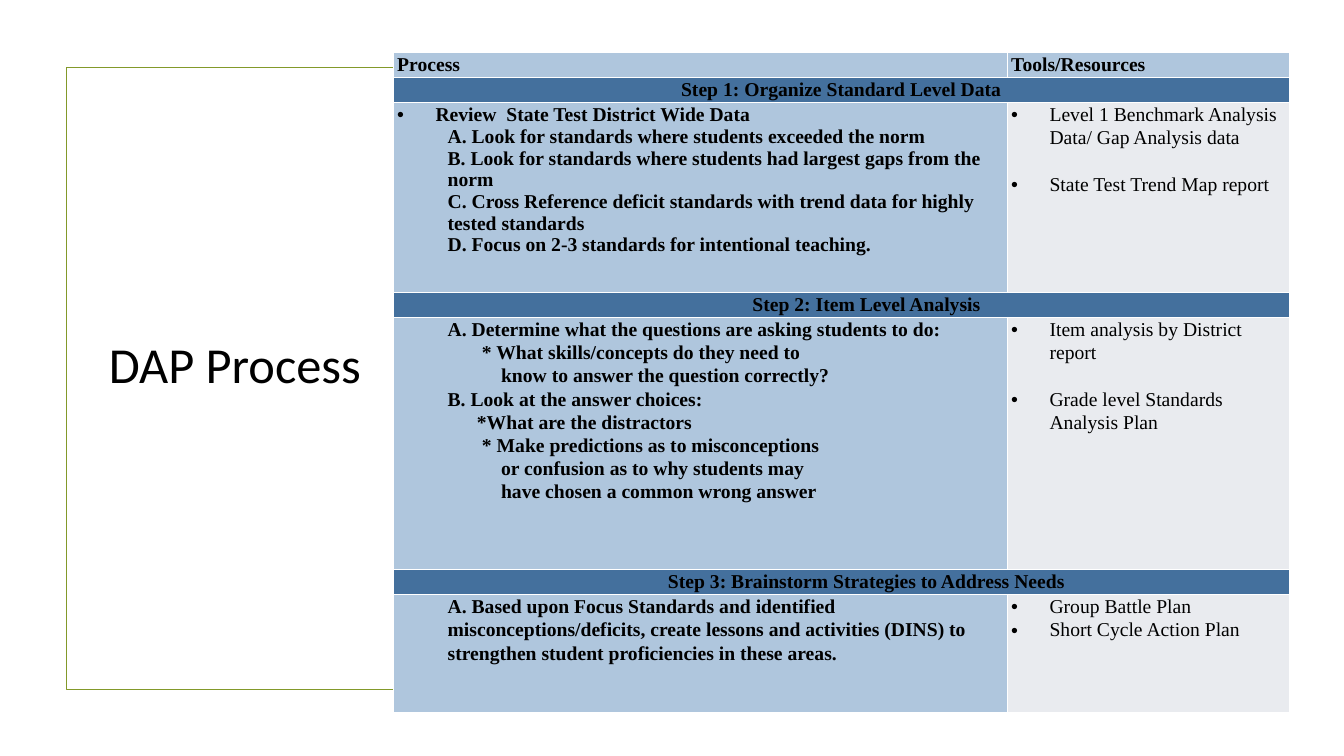
from dataclasses import dataclass

import pptx
import pptx.dml.color
import pptx.enum.text
import pptx.util
from lxml import etree
from pptx.enum.shapes import MSO_SHAPE
from pptx.enum.text import MSO_ANCHOR, PP_ALIGN
from pptx.oxml.ns import qn
from pptx.util import Inches

COLORS = {
    "text": "000000",
    "frame": "83992A",
    "process": "AFC6DD",
    "step": "44709D",
    "tools": "E9EBEF",
}
TABLE_FONT = "Times New Roman"
LINE_SPACING = 1.07
BLANK_LINE = 16.6
COLUMN_WIDTHS = (6.09, 2.8)
HEADER_HEIGHT = 0.25


@dataclass(frozen=True)
class Line:
    text: str
    indent: float = 0.5
    bullet: bool = False
    spacing: float = LINE_SPACING
    before: float = 0
    align: PP_ALIGN = PP_ALIGN.LEFT


@dataclass(frozen=True)
class Step:
    heading: Line
    height: float
    process: tuple[Line, ...]
    tools: tuple[Line, ...]


def bullet(text: str, before: float = 0) -> Line:
    return Line(text, 0.38, True, before=before)


def heading(text: str, indent: float = 0.5) -> Line:
    return Line(text, indent, align=PP_ALIGN.CENTER)


STEPS = (
    Step(
        heading("Step 1: Organize Standard Level Data", 0),
        1.88,
        (
            bullet("Review  State Test District Wide Data"),
            Line("A. Look for standards where students exceeded the norm", spacing=1),
            Line("B. Look for standards where students had largest gaps from the norm", spacing=1),
            Line("C. Cross Reference deficit standards with trend data for highly tested standards", spacing=1),
            Line("D. Focus on 2-3 standards for intentional teaching.", spacing=1),
        ),
        (
            bullet("Level 1 Benchmark Analysis Data/ Gap Analysis data"),
            bullet("State Test Trend Map report", BLANK_LINE),
        ),
    ),
    Step(
        heading("Step 2: Item Level Analysis"),
        2.5,
        (
            Line("A. Determine what the questions are asking students to do:"),
            Line("* What skills/concepts do they need to", 0.84),
            Line("know to answer the question correctly?", 1.03),
            Line("B. Look at the answer choices:"),
            Line("*What are the distractors", 0.79),
            Line("* Make predictions as to misconceptions", 0.84),
            Line("or confusion as to why students may", 1.03),
            Line("have chosen a common wrong answer", 1.03),
        ),
        (
            bullet("Item analysis by District report"),
            bullet("Grade level Standards Analysis Plan", BLANK_LINE),
        ),
    ),
    Step(
        heading("Step 3: Brainstorm Strategies to Address Needs"),
        1.17,
        (
            Line(
                "A. Based upon Focus Standards and identified misconceptions/deficits, "
                "create lessons and activities (DINS) to strengthen student "
                "proficiencies in these areas."
            ),
        ),
        (bullet("Group Battle Plan"), bullet("Short Cycle Action Plan")),
    ),
)


def color(name: str) -> pptx.dml.color.RGBColor:
    return pptx.dml.color.RGBColor.from_string(COLORS[name])


def set_font(paragraph, name: str, size: float, bold: bool) -> None:
    paragraph.font.name = name
    paragraph.font.size = pptx.util.Pt(size)
    paragraph.font.bold = bold
    paragraph.font.color.rgb = color("text")


def write_line(paragraph, line: Line, bold: bool) -> None:
    paragraph.text = line.text
    paragraph.alignment = line.align
    paragraph.line_spacing = line.spacing
    if line.before:
        paragraph.space_before = pptx.util.Pt(line.before)
    properties = paragraph._p.get_or_add_pPr()
    properties.set("marL", str(Inches(line.indent)))
    properties.set("indent", str(-Inches(line.indent) if line.bullet else 0))
    if line.bullet:
        etree.SubElement(properties, qn("a:buFont"), typeface="Arial")
        etree.SubElement(properties, qn("a:buChar"), char="•")
    set_font(paragraph, TABLE_FONT, 14, bold)


def fill_cell(cell, lines: tuple[Line, ...], fill: str, bold: bool = True) -> None:
    cell.margin_left = cell.margin_right = Inches(0.04)
    cell.margin_top = cell.margin_bottom = 0
    cell.fill.solid()
    cell.fill.fore_color.rgb = color(fill)
    for index, line in enumerate(lines):
        frame = cell.text_frame
        paragraph = frame.add_paragraph() if index else frame.paragraphs[0]
        write_line(paragraph, line, bold)


def add_title(slide) -> None:
    title = slide.shapes.title
    title.left, title.top = Inches(0.98), Inches(3.25)
    title.width, title.height = Inches(5.52), Inches(0.71)
    frame = title.text_frame
    frame.text = "DAP Process"
    frame.vertical_anchor = MSO_ANCHOR.MIDDLE
    frame.auto_size = pptx.enum.text.MSO_AUTO_SIZE.NONE
    frame.paragraphs[0].alignment = PP_ALIGN.LEFT
    set_font(frame.paragraphs[0], "Calibri", 36, False)


def add_frame(slide) -> None:
    frame = slide.shapes.add_shape(
        MSO_SHAPE.RECTANGLE, Inches(0.66), Inches(0.67), Inches(12), Inches(6.17)
    )
    frame.shadow.inherit = False
    frame.fill.background()
    frame.line.color.rgb = color("frame")
    frame.line.width = pptx.util.Pt(1.25)


def add_process_table(slide) -> None:
    heights = [HEADER_HEIGHT]
    for step in STEPS:
        heights += [HEADER_HEIGHT, step.height]
    table = slide.shapes.add_table(
        len(heights), len(COLUMN_WIDTHS), Inches(3.9), Inches(0.52),
        Inches(sum(COLUMN_WIDTHS)), Inches(sum(heights)),
    ).table
    table.horz_banding = False
    for column, width in zip(table.columns, COLUMN_WIDTHS):
        column.width = Inches(width)
    for row, height in zip(table.rows, heights):
        row.height = Inches(height)
    for index, text in enumerate(("Process", "Tools/Resources")):
        fill_cell(table.cell(0, index), (Line(text, 0),), "process")
    for index, step in enumerate(STEPS):
        top = 1 + 2 * index
        table.cell(top, 0).merge(table.cell(top, 1))
        fill_cell(table.cell(top, 0), (step.heading,), "step")
        fill_cell(table.cell(top + 1, 0), step.process, "process")
        fill_cell(table.cell(top + 1, 1), step.tools, "tools", False)


def main() -> None:
    presentation = pptx.Presentation()
    presentation.slide_width = Inches(13.33)
    presentation.slide_height = Inches(7.5)
    slide = presentation.slides.add_slide(presentation.slide_layouts[5])
    add_title(slide)
    add_frame(slide)
    add_process_table(slide)
    presentation.save("out.pptx")


if __name__ == "__main__":
    main()
